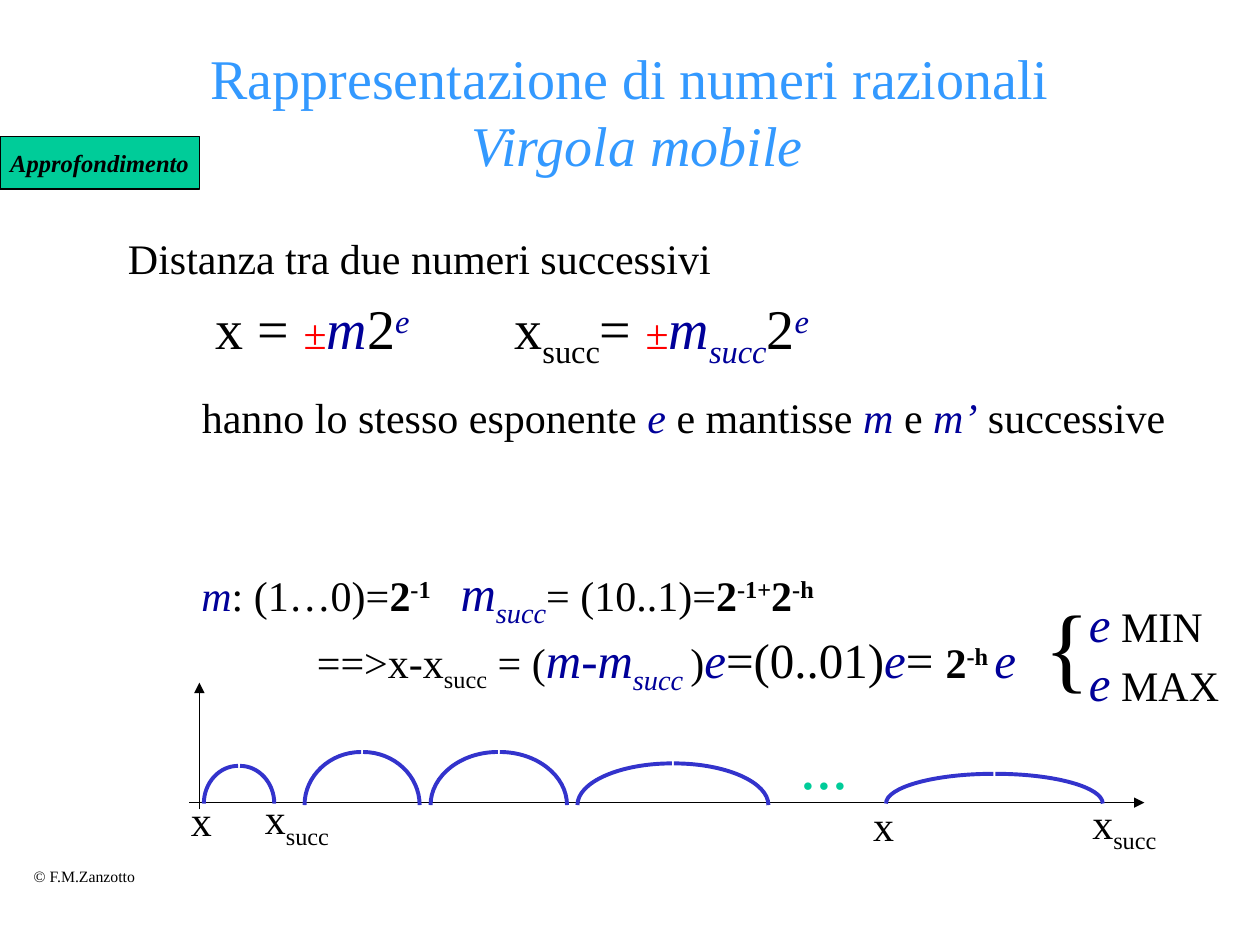
import pptx
import pptx.dml.color
import pptx.enum.shapes
import pptx.enum.text
import pptx.oxml.ns
import pptx.util
from lxml import etree

Cm, Pt = pptx.util.Cm, pptx.util.Pt
qn = pptx.oxml.ns.qn
Anchor = pptx.enum.text.MSO_ANCHOR
Align = pptx.enum.text.PP_ALIGN
Fit = pptx.enum.text.MSO_AUTO_SIZE

COLORS = {"ink": "000000", "title": "3399FF", "var": "000099",
          "sign": "FF0000", "arc": "3333CC", "green": "00CC99"}
SUP, SUB = 30000, -25000
BEND = 0.55  # control point of a quarter ellipse


def rgb(name):
    return pptx.dml.color.RGBColor.from_string(COLORS[name])


def var(text, size=28, base=0):
    """A run for a variable: navy italic."""
    return text, size, {"color": "var", "italic": True, "base": base}


def raised(text, size=24):
    return text, size, {"bold": True, "base": SUP}


def sub(text, size=24):
    return text, size, {"base": SUB}


def gap(size, points):
    """One wide space between two formulas."""
    return " ", size, {"track": points}


class Deck:
    font = "Times New Roman"

    def __init__(self):
        self.prs = pptx.Presentation()
        self.prs.slide_width, self.prs.slide_height = Cm(25.4), Cm(19.05)
        self.slide = self.prs.slides.add_slide(self.prs.slide_layouts[5])
        self.shapes = self.slide.shapes

    def style(self, run, size, color="ink", bold=False, italic=False,
              base=0, track=0):
        font = run.font
        font.name, font.size = self.font, Pt(size)
        font.bold, font.italic = bold, italic
        font.color.rgb = rgb(color)
        props = run._r.get_or_add_rPr()
        if base:
            props.set("baseline", str(base))
        if track:
            props.set("spc", str(track * 100))

    def title(self, first, second, box):
        shape = self.shapes.title
        shape.left, shape.top, shape.width, shape.height = map(Cm, box)
        frame = shape.text_frame
        frame.auto_size = Fit.NONE
        frame.vertical_anchor = Anchor.MIDDLE
        para = frame.paragraphs[0]
        para.text = first + "\v" + second
        para.alignment = Align.CENTER
        for run, slant in zip(para.runs, (False, True)):
            self.style(run, 32, "title", italic=slant)
        for mark in para._p.findall(qn("a:br")):
            etree.SubElement(mark, qn("a:rPr"), sz="3200")

    def text(self, box, paras, wrap=False):
        """Each paragraph is (runs, layout); a run is (text, size, style)."""
        frame = self.shapes.add_textbox(*map(Cm, box)).text_frame
        frame.word_wrap = wrap
        if not wrap:
            frame.auto_size = Fit.SHAPE_TO_FIT_TEXT
        for i, (runs, layout) in enumerate(paras):
            para = frame.add_paragraph() if i else frame.paragraphs[0]
            self.layout(para, **layout)
            for words, size, look in runs:
                run = para.add_run()
                run.text = words
                self.style(run, size, **look)

    def layout(self, para, left=0, hang=0, before=0):
        para.space_before = Pt(before)
        props = para._p.get_or_add_pPr()
        props.set("marL", str(Cm(left)))
        props.set("indent", str(Cm(-hang)))

    def label(self, box, *runs):
        self.text(box, [(runs, {})])

    def badge(self, words, box):
        shape = self.shapes.add_shape(
            pptx.enum.shapes.MSO_SHAPE.RECTANGLE, *map(Cm, box))
        shape.shadow.inherit = False
        shape.fill.solid()
        shape.fill.fore_color.rgb = rgb("green")
        shape.line.color.rgb, shape.line.width = rgb("ink"), Pt(0.75)
        frame = shape.text_frame
        frame.word_wrap = False
        frame.vertical_anchor = Anchor.MIDDLE
        frame.text = words
        frame.paragraphs[0].alignment = Align.CENTER
        self.style(frame.paragraphs[0].runs[0], 14, bold=True, italic=True)

    def arrow(self, *ends):
        line = self.shapes.add_connector(
            pptx.enum.shapes.MSO_CONNECTOR.STRAIGHT, *map(Cm, ends))
        line.line.color.rgb, line.line.width = rgb("ink"), Pt(0.75)
        props = line._element.spPr
        etree.SubElement(props.find(qn("a:ln")), qn("a:tailEnd"), type="triangle")
        etree.SubElement(props, qn("a:effectLst"))

    def arch(self, left, right, top, base, space=0.04):
        """Two quarter ellipses that almost meet at the top."""
        wide, high = (right - left - space) / 2, base - top
        for side, mid in ((-1, left + wide), (1, right - wide)):
            end = mid + side * wide
            points = [(Cm(x), Cm(y)) for x, y in (
                (mid, top), (mid + side * wide * BEND, top),
                (end, base - high * BEND), (end, base))]
            path = self.shapes.build_freeform(*points[0])
            path.add_line_segments(points[1:], close=False)
            shape = path.convert_to_shape()
            self.curve(shape)
            shape.shadow.inherit = False
            shape.fill.background()
            shape.line.color.rgb, shape.line.width = rgb("arc"), Pt(2.25)

    def curve(self, shape):
        """Turn the three segments of a freeform into one Bezier curve."""
        steps = list(shape._element.iter(qn("a:lnTo")))
        curve = etree.SubElement(steps[0].getparent(), qn("a:cubicBezTo"))
        for step in steps:
            curve.append(step[0])
            step.getparent().remove(step)


def main():
    deck = Deck()
    deck.title("Rappresentazione di numeri razionali", " Virgola mobile",
               (1.9, 1.28, 21.6, 1.9))
    deck.label((0.43, 17.35, 2.59, 0.64), ("© F.M.Zanzotto", 9, {}))

    # Two consecutive numbers
    sign = ("±", 24, {"color": "sign"})
    power = var("e", 32, SUP)
    level = {"left": 2.28, "hang": 0.79}
    deck.text((2.33, 4.56, 21.59, 11.43), [
        ([("Distanza tra due numeri successivi", 24, {})],
         {"left": 0.97, "hang": 0.97}),
        ([(" x = ", 32, {}), sign, var("m", 32), ("2", 32, {}), power,
          gap(32, 52), ("x", 32, {}), sub("succ", 32), ("= ", 32, {}), sign,
          var("m", 32), var("succ", 32, SUB), ("2", 32, {}), power],
         dict(level, before=6.4)),
        ([("hanno lo stesso esponente ", 24, {}), var("e", 24),
          (" e mantisse ", 24, {}), var("m", 24), (" e ", 24, {}),
          var("m’", 24), (" successive", 24, {})],
         dict(level, before=12)),
    ], wrap=True)

    # Mantissas and their distance
    two = ("2", 24, {"bold": True})
    deck.text((3.81, 11.21, 17.35, 2.62), [
        ([var("m", 24), (": (1…0)=", 24, {}), two, raised("-1"),
          gap(24, 11), var("m"), var("succ", 28, SUB),
          ("= (10..1)=", 24, {}), two, raised("-1+"), two, raised("-h")], {}),
        ([("==>x-x", 24, {}), sub("succ"), (" = (", 24, {}), var("m-m"),
          var("succ ", 28, SUB), (")", 24, {}), var("e"),
          ("=(0..01)", 28, {}), var("e"), ("= ", 28, {}), two,
          raised("-h "), var("e")],
         {"left": 2.33}),
    ], wrap=True)
    deck.text((21.49, 11.84, 3.35, 2.62), [
        ([(" ", 24, {}), var("e"), (" " + bound, 24, {})], {})
        for bound in ("MIN", "MAX")])
    deck.label((20.34, 11.71, 1.9, 2.54), (" {", 54, {}))

    # Number line
    for left, top in ((3.6, 15.9), (17.35, 15.99)):
        deck.label((left, top, 0.94, 1.27), ("x", 24, {}))
    for left, top in ((5.09, 15.86), (21.77, 15.95)):
        deck.label((left, top, 1.93, 1.27), ("x", 24, {}), sub("succ"))
    deck.arrow(3.81, 16.18, 23.07, 16.18)
    deck.arrow(4.02, 16.31, 4.02, 13.76)
    for span in ((4.11, 5.53, 15.44, 16.2), (6.14, 8.46, 15.16, 16.23),
                 (8.68, 11.43, 15.16, 16.23), (11.64, 15.49, 15.39, 16.23),
                 (17.86, 22.23, 15.6, 16.2)):
        deck.arch(*span)
    deck.label((15.89, 14.53, 1.47, 1.78), ("...", 36, {"color": "green"}))

    deck.badge("Approfondimento", (0, 2.75, 4.02, 1.06))
    deck.prs.save("out.pptx")


if __name__ == "__main__":
    main()
